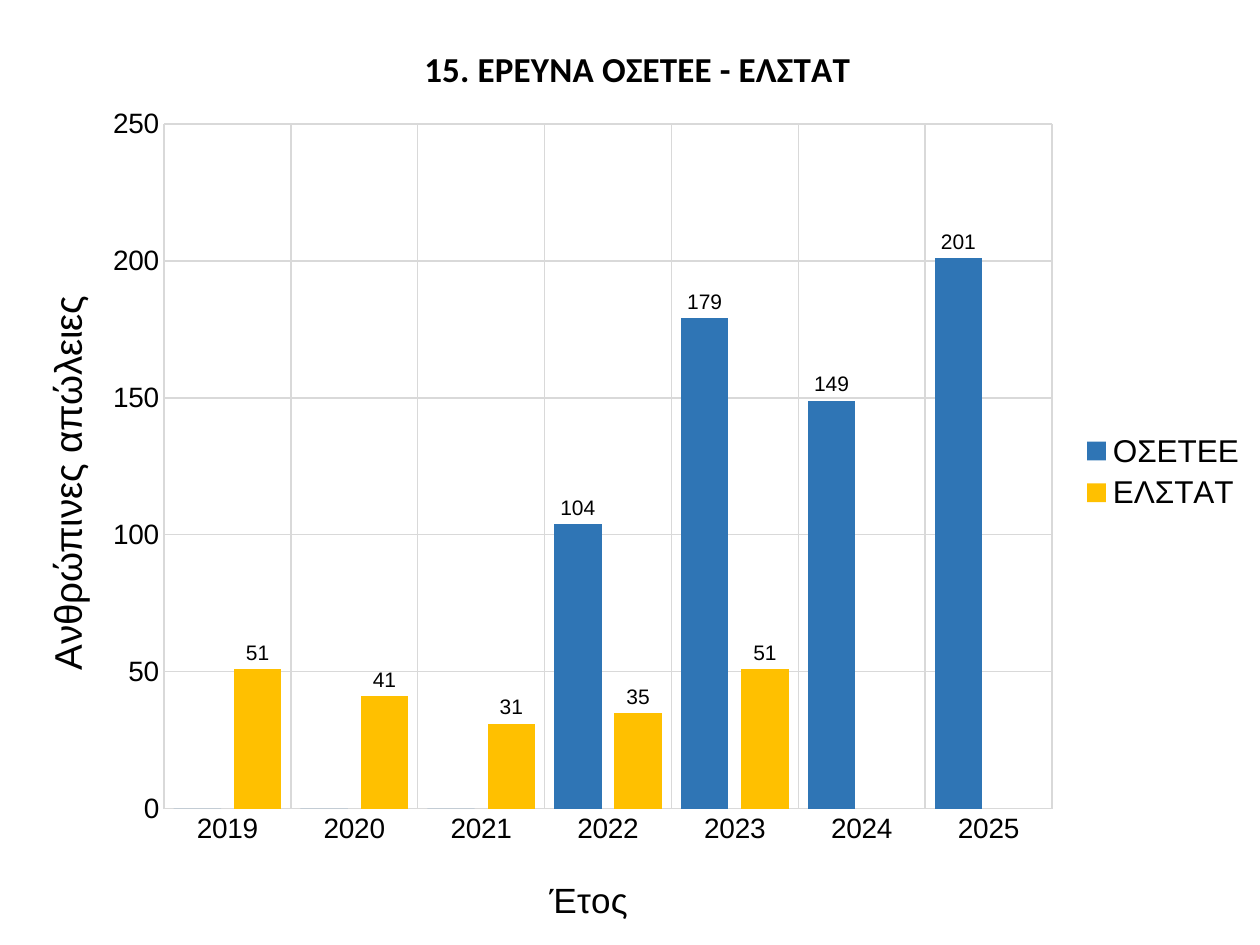
import pptx
import pptx.chart.data
import pptx.dml.color
import pptx.enum.chart
import pptx.oxml
import pptx.util
from dataclasses import dataclass

PX = 914400 // 126  # EMU in one px
SLIDE_W, SLIDE_H = 1260, 945
YEARS = ["2019", "2020", "2021", "2022", "2023", "2024", "2025"]


@dataclass(frozen=True)
class Theme:
    text: str = "000000"
    grid: str = "D9D9D9"
    survey: str = "2F75B5"
    statistics: str = "FFC000"
    title_font: str = "Calibri"
    body_font: str = "Arial"
    title: int = 20
    value_title: int = 22
    year_title: int = 20
    legend: int = 18
    tick: int = 16
    label: int = 12


THEME = Theme()
SERIES = [
    ("ΟΣΕΤΕΕ", [0, 0, 0, 104, 179, 149, 201], THEME.survey),
    ("ΕΛΣΤΑΤ", [51, 41, 31, 35, 51, None, None], THEME.statistics),
]


def rgb(value):
    return pptx.dml.color.RGBColor.from_string(value)


def style_font(font, size, name=THEME.body_font, bold=False):
    font.size = pptx.util.Pt(size)
    font.name = name
    font.bold = bold
    font.color.rgb = rgb(THEME.text)


def style_line(line):
    line.color.rgb = rgb(THEME.grid)
    line.width = pptx.util.Pt(0.75)


def set_title(title, text, size, **style):
    r = title.text_frame.paragraphs[0].add_run()
    r.text = text
    style_font(r.font, size, **style)


def place(parent, box, left, top, width=None, height=None):
    """Put a chart part at px offsets within the chart box."""
    for old in parent.findall(pptx.oxml.ns.qn("c:layout")):
        parent.remove(old)
    parts = [("xMode", "edge"), ("yMode", "edge"),
             ("x", round(left / box[2], 4)), ("y", round(top / box[3], 4))]
    if width:
        parts.insert(0, ("layoutTarget", "inner"))
        parts += [("w", round(width / box[2], 4)), ("h", round(height / box[3], 4))]
    body = "".join(f'<c:{tag} val="{val}"/>' for tag, val in parts)
    ns = pptx.oxml.ns.nsdecls("c")
    layout = pptx.oxml.parse_xml(
        f"<c:layout {ns}><c:manualLayout>{body}</c:manualLayout></c:layout>")
    # The layout follows the text of a title and comes first in a plot area
    tx = parent.find(pptx.oxml.ns.qn("c:tx"))
    if tx is None:
        parent.insert(0, layout)
    else:
        tx.addnext(layout)


def style_axis(axis, text, size):
    set_title(axis.axis_title, text, size)
    style_font(axis.tick_labels.font, THEME.tick)
    axis.major_tick_mark = pptx.enum.chart.XL_TICK_MARK.NONE
    axis.minor_tick_mark = pptx.enum.chart.XL_TICK_MARK.NONE
    axis.has_major_gridlines = True
    style_line(axis.major_gridlines.format.line)


def style_series(series, color):
    series.format.fill.solid()
    series.format.fill.fore_color.rgb = rgb(color)
    series.invert_if_negative = False
    labels = series.data_labels
    labels.show_value = True
    labels.number_format = "0;;;"  # zero gets no label
    labels.number_format_is_linked = False
    labels.position = pptx.enum.chart.XL_LABEL_POSITION.OUTSIDE_END
    style_font(labels.font, THEME.label)


def add_losses_chart(s, box):
    data = pptx.chart.data.CategoryChartData()
    data.categories = YEARS
    for name, values, _ in SERIES:
        data.add_series(name, values)
    chart = s.shapes.add_chart(
        pptx.enum.chart.XL_CHART_TYPE.COLUMN_CLUSTERED,
        *(v * PX for v in box), data).chart
    style_font(chart.font, 10, THEME.title_font)

    # Title
    chart.has_title = True
    set_title(chart.chart_title, "15. ΕΡΕΥΝΑ ΟΣΕΤΕΕ - ΕΛΣΤΑΤ", THEME.title,
              name=THEME.title_font, bold=True)
    place(chart.chart_title._element, box, 418, 38)

    # Columns
    plot = chart.plots[0]
    plot.gap_width = 40
    plot.overlap = -27
    plot.vary_by_categories = False
    for series, (_, _, color) in zip(plot.series, SERIES):
        style_series(series, color)
    place(chart._chartSpace.chart.plotArea, box, 164, 124, 888, 685)

    # Axes
    years, losses = chart.category_axis, chart.value_axis
    style_axis(years, "Έτος", THEME.year_title)
    style_line(years.format.line)
    place(years.axis_title._element, box, 543, 872)
    style_axis(losses, "Ανθρώπινες απώλειες", THEME.value_title)
    losses.format.line.fill.background()
    losses.minimum_scale, losses.maximum_scale, losses.major_unit = 0, 250, 50
    place(losses.axis_title._element, box, 36, 289)

    # Legend
    chart.has_legend = True
    chart.legend.position = pptx.enum.chart.XL_LEGEND_POSITION.RIGHT
    chart.legend.include_in_layout = False
    style_font(chart.legend.font, THEME.legend)


def main():
    prs = pptx.Presentation()
    prs.slide_width, prs.slide_height = SLIDE_W * PX, SLIDE_H * PX
    s = prs.slides.add_slide(prs.slide_layouts[6])
    add_losses_chart(s, (0, 0, SLIDE_W, SLIDE_H - 1))
    prs.save("out.pptx")


if __name__ == "__main__":
    main()
